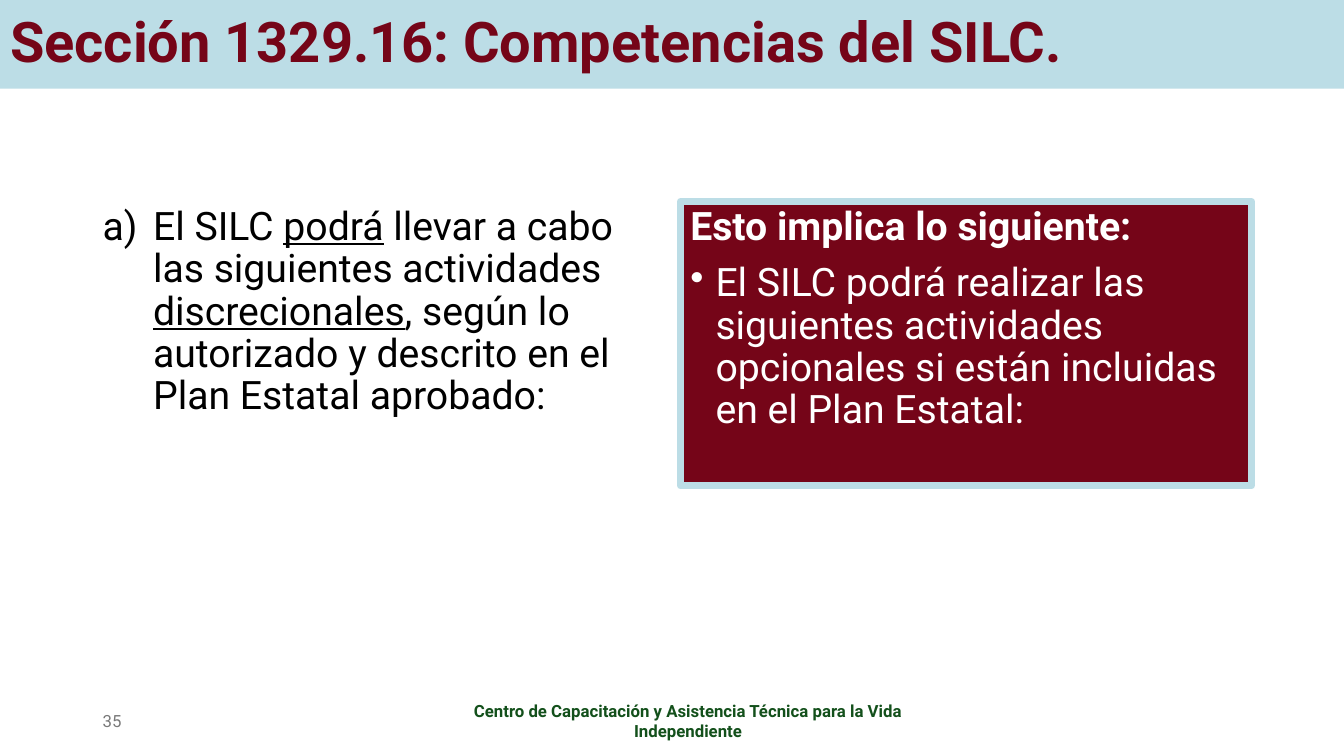
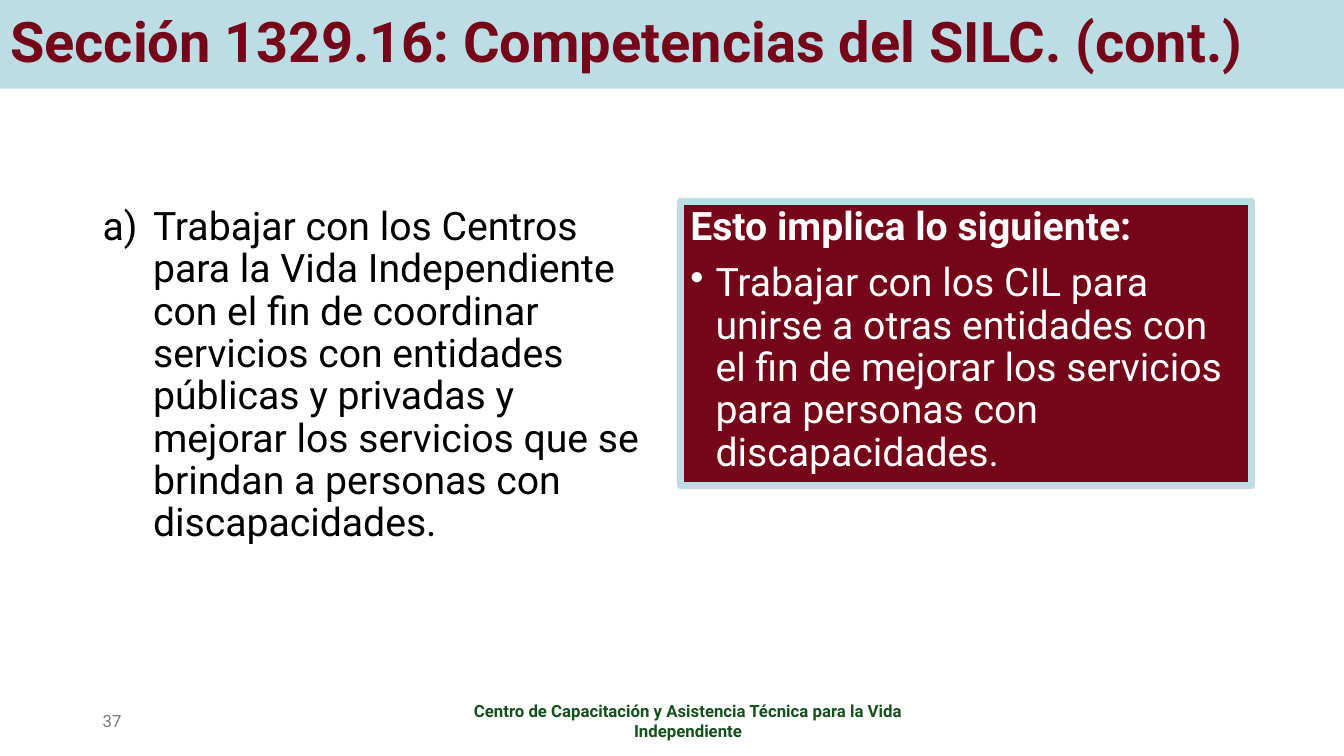
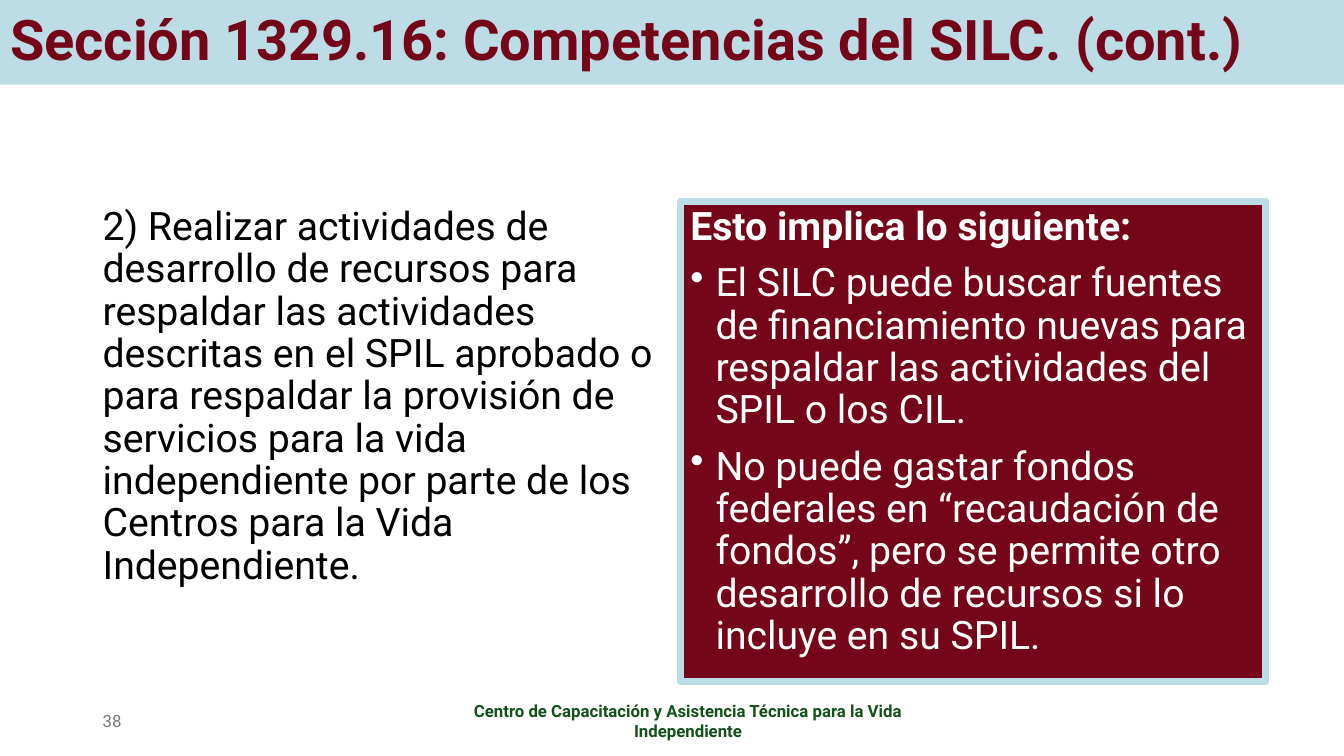
import pptx
import pptx.dml.color
import pptx.enum.shapes
import pptx.enum.text
import pptx.oxml.ns
import pptx.util
from lxml import etree

Pt = pptx.util.Pt
RGBColor = pptx.dml.color.RGBColor
PP_ALIGN = pptx.enum.text.PP_ALIGN
MSO_ANCHOR = pptx.enum.text.MSO_ANCHOR

MAROON = RGBColor(0x75, 0x05, 0x18)
PALE_BLUE = RGBColor(0xBC, 0xDD, 0xE6)
GREEN = RGBColor(0x13, 0x50, 0x1B)
GRAY = RGBColor(0x79, 0x79, 0x79)
BLACK = RGBColor(0, 0, 0)
WHITE = RGBColor(0xFF, 0xFF, 0xFF)

FONT = "Roboto"
WIDTH, HEIGHT = 960, 540
LEFT_COLUMN, RIGHT_COLUMN = 66.24, 486
COLUMN_TOP, COLUMN_WIDTH, COLUMN_HEIGHT = 144, 408, 342.72
FOOTER_TOP, FOOTER_HEIGHT = 500.4, 28.8

SECTION = "Sección 1329.16: Competencias del SILC."
FOOTER = "Centro de Capacitación y Asistencia Técnica para la Vida Independiente"
BOX_HEADING = "Esto implica lo siguiente:"
LETTER = ("buAutoNum", {"type": "alphaLcParenR"})
DOT = ("buChar", {"char": "•"})


def write_text(frame, text, size=28, color=BLACK, bold=False, align=PP_ALIGN.LEFT,
               line_spacing=None, space_before=0, bullet=None, indent=0):
    """Add one paragraph; words between underscores are underlined."""
    paragraph = frame.paragraphs[0]
    if paragraph.runs:
        paragraph = frame.add_paragraph()
    paragraph.alignment = align
    paragraph.space_before = Pt(space_before)
    if line_spacing:
        paragraph.line_spacing = line_spacing
    if bullet:
        tag, attributes = bullet
        properties = paragraph._p.get_or_add_pPr()
        properties.set("marL", str(Pt(indent)))
        properties.set("indent", str(-Pt(indent)))
        etree.SubElement(properties, pptx.oxml.ns.qn("a:" + tag), attributes)
    for index, piece in enumerate(text.split("_")):
        run = paragraph.add_run()
        run.text = piece
        run.font.name = FONT
        run.font.size = Pt(size)
        run.font.bold = bold
        run.font.underline = index % 2 == 1
        run.font.color.rgb = color


class Deck:
    def __init__(self):
        self.presentation = pptx.Presentation()
        self.presentation.slide_width = Pt(WIDTH)
        self.presentation.slide_height = Pt(HEIGHT)
        self.slide = None

    def start_slide(self, title, number, band_height=63.36):
        layout = self.presentation.slide_layouts.get_by_name("Title Only")
        self.slide = self.presentation.slides.add_slide(layout)
        self.title_band(title, band_height)
        self.footer(number)

    def title_band(self, text, height):
        band = self.slide.shapes.title
        band.left, band.top = Pt(0), Pt(0)
        band.width, band.height = Pt(WIDTH), Pt(height)
        band.fill.solid()
        band.fill.fore_color.rgb = PALE_BLUE
        self.prepare_frame(band, MSO_ANCHOR.MIDDLE)
        write_text(band.text_frame, text, size=40, color=MAROON, bold=True, line_spacing=0.9)

    def footer(self, number):
        number_frame = self.text_box(LEFT_COLUMN, FOOTER_TOP, 216, FOOTER_HEIGHT, MSO_ANCHOR.MIDDLE)
        write_text(number_frame, str(number), size=12, color=GRAY)
        center_frame = self.text_box(318, FOOTER_TOP, 347, FOOTER_HEIGHT, MSO_ANCHOR.MIDDLE)
        write_text(center_frame, FOOTER, size=12, color=GREEN, bold=True, align=PP_ALIGN.CENTER)

    def prepare_frame(self, shape, anchor):
        frame = shape.text_frame
        frame.word_wrap = True
        frame.auto_size = pptx.enum.text.MSO_AUTO_SIZE.NONE
        frame.vertical_anchor = anchor
        return frame

    def text_box(self, left, top, width, height, anchor=MSO_ANCHOR.TOP):
        shape = self.slide.shapes.add_textbox(Pt(left), Pt(top), Pt(width), Pt(height))
        return self.prepare_frame(shape, anchor)

    def regulation(self, text, bullet=None):
        frame = self.text_box(LEFT_COLUMN, COLUMN_TOP, COLUMN_WIDTH, COLUMN_HEIGHT)
        write_text(frame, text, line_spacing=0.9, space_before=10, bullet=bullet, indent=36)

    def meaning_box(self, points, width=COLUMN_WIDTH, height=203):
        box = self.slide.shapes.add_shape(
            pptx.enum.shapes.MSO_SHAPE.RECTANGLE,
            Pt(RIGHT_COLUMN), Pt(COLUMN_TOP), Pt(width), Pt(height))
        box.shadow.inherit = False
        box.fill.solid()
        box.fill.fore_color.rgb = MAROON
        box.line.color.rgb = PALE_BLUE
        box.line.width = Pt(5)
        frame = self.prepare_frame(box, MSO_ANCHOR.TOP)
        style = {"color": WHITE, "line_spacing": 0.9, "space_before": 10}
        write_text(frame, BOX_HEADING, bold=True, **style)
        for point in points:
            write_text(frame, point, bullet=DOT, indent=18, **style)


def main():
    deck = Deck()
    continued = SECTION + " (cont.)"

    deck.start_slide(SECTION, 35)
    deck.regulation(
        "El SILC _podrá_ llevar a cabo las siguientes actividades _discrecionales_, "
        "según lo autorizado y descrito en el Plan Estatal aprobado:", bullet=LETTER)
    deck.meaning_box([
        "El SILC podrá realizar las siguientes actividades opcionales si están "
        "incluidas en el Plan Estatal:"])

    deck.start_slide(continued, 37)
    deck.regulation(
        "Trabajar con los Centros para la Vida Independiente con el fin de coordinar "
        "servicios con entidades públicas y privadas y mejorar los servicios que se "
        "brindan a personas con discapacidades.", bullet=LETTER)
    deck.meaning_box([
        "Trabajar con los CIL para unirse a otras entidades con el fin de mejorar "
        "los servicios para personas con discapacidades."])

    deck.start_slide(continued, 38, band_height=60.48)
    deck.regulation(
        "2) Realizar actividades de desarrollo de recursos para respaldar las "
        "actividades descritas en el SPIL aprobado o para respaldar la provisión de "
        "servicios para la vida independiente por parte de los Centros para la Vida "
        "Independiente.")
    deck.meaning_box([
        "El SILC puede buscar fuentes de financiamiento nuevas para respaldar las "
        "actividades del SPIL o los CIL.",
        "No puede gastar fondos federales en “recaudación de fondos”, pero se permite "
        "otro desarrollo de recursos si lo incluye en su SPIL."],
        width=418.32, height=COLUMN_HEIGHT)

    deck.presentation.save("out.pptx")


if __name__ == "__main__":
    main()
